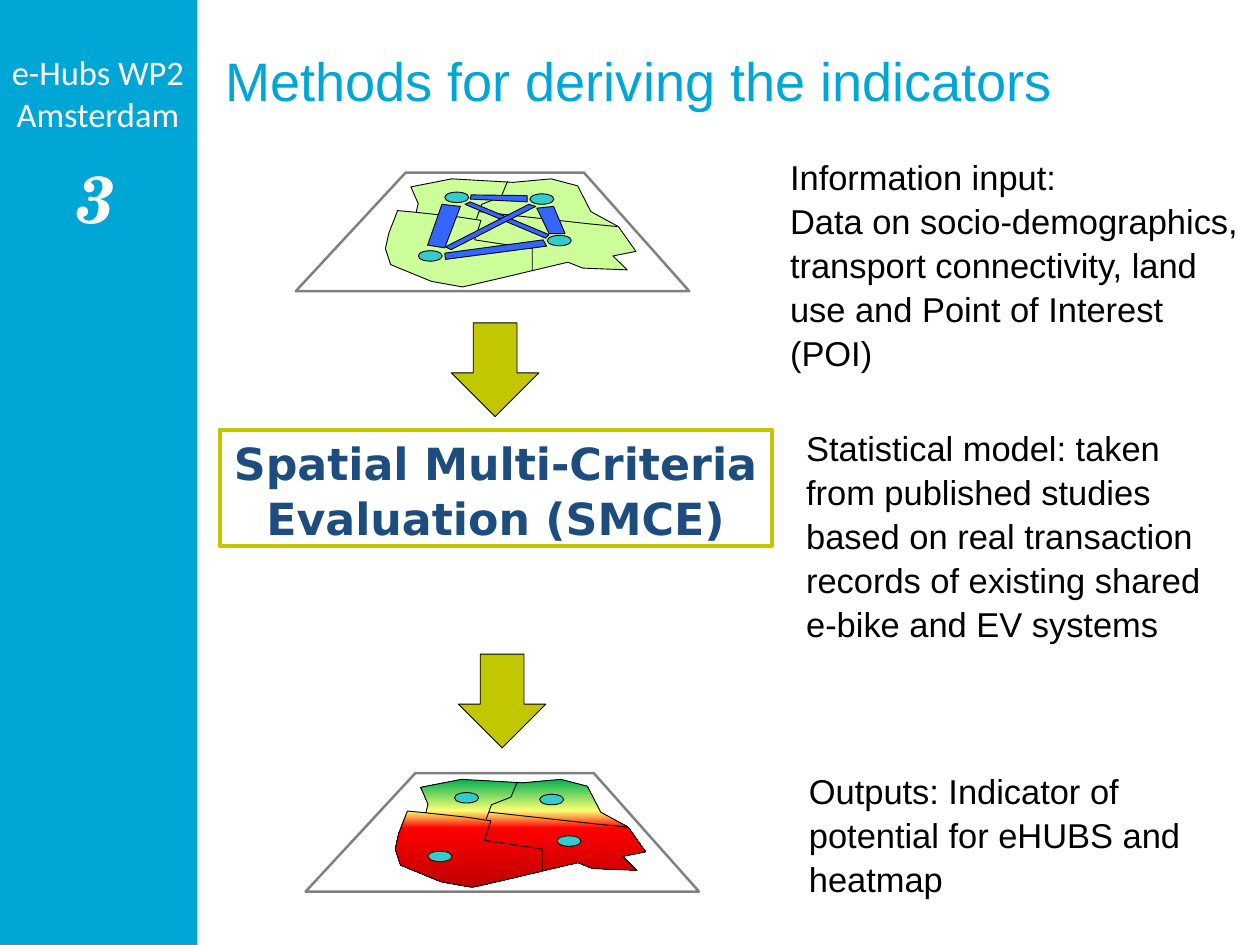
from copy import deepcopy

from pptx import Presentation
from pptx.dml.color import RGBColor
from pptx.enum.shapes import MSO_SHAPE
from pptx.enum.text import MSO_ANCHOR, PP_ALIGN
from pptx.oxml.ns import qn
from pptx.util import Cm, Pt

RECTANGLE, ELLIPSE, DOWN_ARROW = MSO_SHAPE.RECTANGLE, MSO_SHAPE.OVAL, MSO_SHAPE.DOWN_ARROW
LEFT, CENTER, TOP = PP_ALIGN.LEFT, PP_ALIGN.CENTER, MSO_ANCHOR.TOP
TITLE_ONLY = 5

BLUE, OLIVE, NAVY = "00A6D6", "C1C700", "1D4C7F"
WHITE, BLACK, GREY = "FFFFFF", "000000", "808080"
PALE_GREEN, TURQUOISE, LINK_BLUE = "CCFF99", "33CCCC", "3366FF"
HEAT = [(0, "00B050"), (0.29, "FBFF73"), (0.45, "FF0000"), (0.98, "C00000")]

# Map outlines in cm from the top left corner of the map.
FRAME = [(3.15, 0), (0, 3.4), (11.28, 3.4), (8.26, 0)]
REGION = [
    (3.89, 3.12), (2.72, 2.64), (2.57, 2.18), (2.67, 1.73), (2.92, 1.09), (3.45, 1.14),
    (3.51, 0.89), (3.3, 0.41), (4.47, 0.18), (6.22, 0.28), (7.32, 0.18), (8.08, 0.38),
    (8.46, 1.12), (9.25, 1.55), (9.75, 2.26), (9.09, 2.39), (9.5, 2.79), (8.23, 2.74),
    (7.8, 2.57), (5.99, 3), (4.78, 3.28),
]
BORDERS = [
    [(3.45, 1.14), (4.65, 1.27), (5.31, 1.37), (5.13, 1.93), (6.78, 2.18), (6.78, 2.82)],
    [(5.18, 1.32), (5.33, 0.91), (5.89, 0.69), (6.07, 0.25)],
    [(5.26, 1.12), (6.88, 1.3), (8.41, 1.47), (9.22, 1.55)],
]
HUBS = [(3.51, 2.24), (7.21, 1.8), (6.71, 0.61), (4.27, 0.56)]
LINKS = [
    [(4.19, 0.91), (4.72, 0.97), (4.27, 2.16), (3.78, 2.08)],
    [(4.85, 0.91), (5, 0.84), (7.26, 1.78), (7.16, 1.88)],
    [(5.03, 0.64), (5, 0.76), (6.63, 0.84), (6.63, 0.66)],
    [(6.91, 1.02), (7.39, 0.97), (7.72, 1.75), (7.26, 1.75)],
    [(6.68, 0.91), (4.29, 2.13), (4.45, 2.21), (6.88, 0.97)],
    [(7.09, 1.93), (7.19, 2.11), (4.29, 2.49), (4.27, 2.31)],
]


def color(hex_string):
    return RGBColor.from_string(hex_string)


def paint(shape, fill=None, line=None, line_width=0.75):
    shape.shadow.inherit = False
    if fill:
        shape.fill.solid()
        shape.fill.fore_color.rgb = color(fill)
    else:
        shape.fill.background()
    if line:
        shape.line.color.rgb = color(line)
        shape.line.width = Pt(line_width)
    else:
        shape.line.fill.background()


def paint_heat(shape):
    """Fill the shape from green at the top to dark red at the bottom."""
    shape.fill.gradient()
    shape.fill.gradient_angle = 270
    stops = shape.element.spPr.find(qn("a:gradFill")).find(qn("a:gsLst"))
    for _ in range(len(HEAT) - len(stops)):
        stops.append(deepcopy(stops[0]))
    for stop, (position, hex_string) in zip(shape.fill.gradient_stops, HEAT):
        stop.position = position
        stop.color.rgb = color(hex_string)


def write(box, lines, size, font="Arial", ink=BLACK, align=LEFT, spacing=1.0,
          bold=False, italic=False):
    frame = box.text_frame
    frame.word_wrap = True
    frame.vertical_anchor = TOP
    frame.text = "\n".join(lines)
    for para in frame.paragraphs:
        para.alignment = align
        para.line_spacing = spacing
        para.font.name = font
        para.font.size = Pt(size)
        para.font.bold = bold
        para.font.italic = italic
        para.font.color.rgb = color(ink)


def add_block(page, shape_type, left, top, width, height, **look):
    block = page.shapes.add_shape(shape_type, Cm(left), Cm(top), Cm(width), Cm(height))
    paint(block, **look)
    return block


def add_text(page, left, top, width, height, lines, size, **style):
    box = page.shapes.add_textbox(Cm(left), Cm(top), Cm(width), Cm(height))
    write(box, lines, size, **style)


def add_sidebar(page, left, top, width, height):
    add_block(page, RECTANGLE, left, top, width, height, fill=BLUE)
    add_text(page, left - 0.05, top + 4.39, width, 2.57, ["3"], 54,
             font="TeX Gyre Schola", ink=WHITE, align=CENTER, bold=True, italic=True)
    add_text(page, left, top + 1.35, width - 0.05, 3.84, ["e-Hubs WP2", "Amsterdam"], 28,
             font="Calibri", ink=WHITE, align=CENTER)


def add_title(page, left, top, width, height):
    title = page.shapes.title
    title.left, title.top, title.width, title.height = Cm(left), Cm(top), Cm(width), Cm(height)
    write(title, ["Methods for deriving the indicators"], 44, ink=BLUE)
    frame = title.text_frame
    frame.margin_left = frame.margin_top = frame.margin_right = frame.margin_bottom = 0


def add_map(page, left, top, links=(), heat=False):
    """Draw the tilted map with its hubs, as a heatmap or with links between hubs."""
    shapes = page.shapes.add_group_shape().shapes

    def outline(points, close=True, **look):
        (start_x, start_y), *others = [(Cm(left + x), Cm(top + y)) for x, y in points]
        builder = shapes.build_freeform(start_x, start_y)
        builder.add_line_segments(others, close=close)
        shape = builder.convert_to_shape()
        paint(shape, **look)
        return shape

    outline(FRAME, fill=WHITE, line=GREY, line_width=2)
    region = outline(REGION, fill=PALE_GREEN, line=BLACK)
    if heat:
        paint_heat(region)
    for border in BORDERS:
        outline(border, close=False, line=BLACK)
    for x, y in HUBS:
        hub = shapes.add_shape(ELLIPSE, Cm(left + x), Cm(top + y), Cm(0.69), Cm(0.3))
        paint(hub, fill=TURQUOISE, line=BLACK)
    for link in links:
        outline(link, fill=LINK_BLUE, line=BLACK)


def add_flow(page, left, top):
    """Place input map, evaluation box and output map, joined by arrows."""
    add_map(page, left + 2.18, top, links=LINKS)
    for x, y in [(6.64, 4.31), (6.84, 13.81)]:
        add_block(page, DOWN_ARROW, left + x, top + y, 2.51, 2.69, fill=OLIVE, line=BLACK)
    add_map(page, left + 2.46, top + 17.22, heat=True)
    method = add_block(page, RECTANGLE, left, top + 7.37, 15.82, 3.33,
                       line=OLIVE, line_width=3.25)
    write(method, ["Spatial Multi-Criteria Evaluation (SMCE)"], 36, font="DejaVu Sans",
          ink=NAVY, align=CENTER, spacing=1.04, bold=True)


def add_explanations(page, left, top):
    notes = [
        (0, 0, 13.56, 6.25, [
            "Information input:",
            "Data on socio-demographics, transport connectivity, land use and "
            "Point of Interest (POI)"]),
        (0.46, 7.77, 12.07, 6.25, [
            "Statistical model: taken from published studies based on real transaction "
            "records of existing shared e-bike and EV systems"]),
        (0.54, 17.6, 11.99, 3.84, [
            "Outputs: Indicator of potential for eHUBS and heatmap"]),
    ]
    for x, y, width, height, lines in notes:
        add_text(page, left + x, top + y, width, height, lines, 28, spacing=1.06)


def main():
    deck = Presentation()
    deck.slide_width, deck.slide_height = Cm(36.12), Cm(27.1)
    page = deck.slides.add_slide(deck.slide_layouts[TITLE_ONLY])
    add_sidebar(page, 0, 0, 5.66, 27.1)
    add_title(page, 6.45, 1.35, 27.81, 4.19)
    add_flow(page, 6.3, 4.95)
    add_explanations(page, 22.4, 4.29)
    deck.save("out.pptx")


if __name__ == "__main__":
    main()
